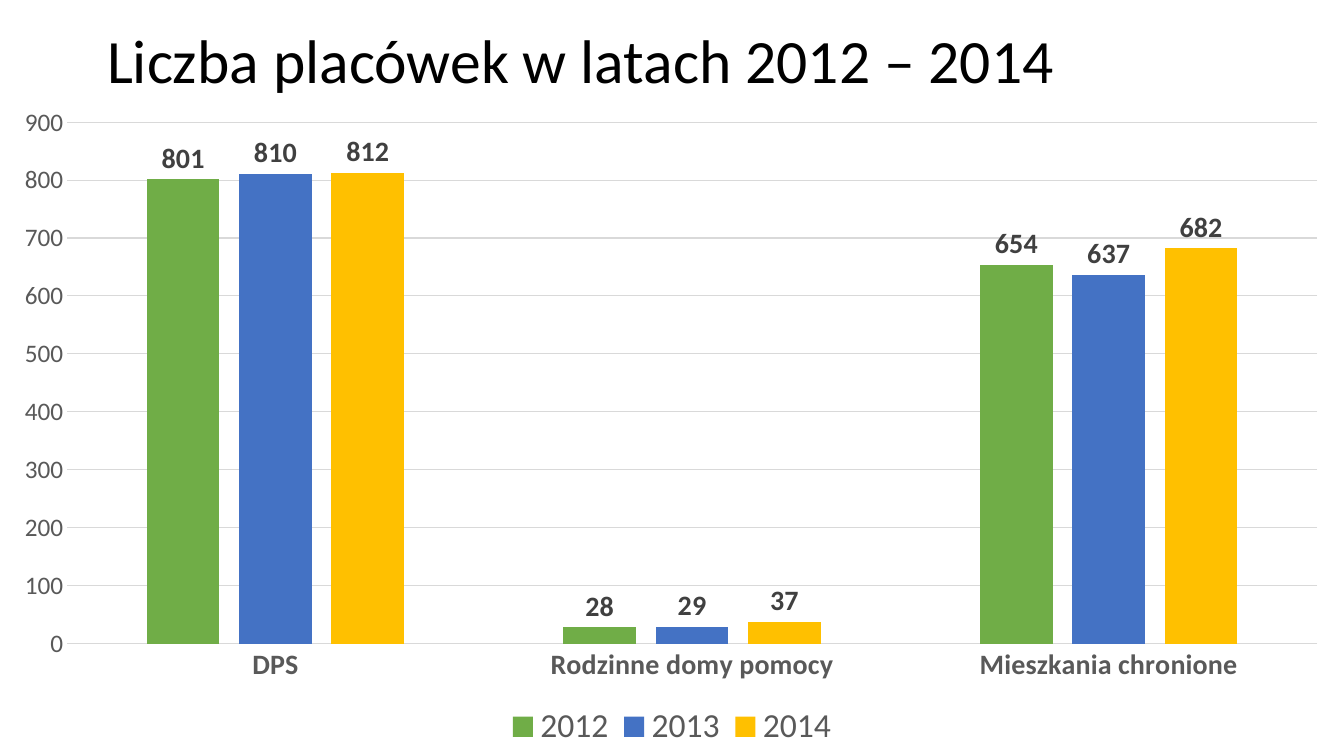
from lxml import etree
from pptx import Presentation
from pptx.chart.data import CategoryChartData
from pptx.dml.color import RGBColor
from pptx.enum.chart import (XL_CHART_TYPE, XL_LABEL_POSITION, XL_LEGEND_POSITION,
                             XL_TICK_MARK)
from pptx.enum.dml import MSO_LINE
from pptx.enum.text import MSO_ANCHOR, PP_ALIGN
from pptx.oxml.ns import qn
from pptx.util import Pt

COLUMNS = XL_CHART_TYPE.COLUMN_CLUSTERED
OUTSIDE_END = XL_LABEL_POSITION.OUTSIDE_END
BOTTOM = XL_LEGEND_POSITION.BOTTOM
NO_TICKS = XL_TICK_MARK.NONE
SOLID = MSO_LINE.SOLID
MIDDLE = MSO_ANCHOR.MIDDLE
CENTER = PP_ALIGN.CENTER

TITLE = "Liczba placówek w latach 2012 – 2014"
CATEGORIES = ["DPS", "Rodzinne domy pomocy", "Mieszkania chronione"]
SERIES = [
    ("2012", [801, 28, 654], "70AD47"),
    ("2013", [810, 29, 637], "4472C4"),
    ("2014", [812, 37, 682], "FFC000"),
]

THEME = {
    "font": "Calibri",
    "title": (44, "000000", False),
    "base": (10, "000000", False),
    "category": (20, "595959", True),
    "value": (18, "595959", False),
    "label": (20, "404040", True),
    "legend": (24, "595959", False),
    "rule": "D9D9D9",
}

SLIDE_SIZE = (960, 540)
TITLE_BOX = (31, 8, 768, 75)
CHART_BOX = (0, 68.4, 960, 471.6)
# Shares of the chart box: left, top, width, height
PLOT_SHARE = (0.05, 0.04, 0.93, 0.79)
LEGEND_SHARE = (0.37, 0.92, 0.26, 0.08)


def style_font(font, role):
    size, color, bold = THEME[role]
    font.name = THEME["font"]
    font.size = Pt(size)
    font.bold = bold
    font.color.rgb = RGBColor.from_string(color)


def style_rule(line):
    line.dash_style = SOLID
    line.width = Pt(0.75)
    line.color.rgb = RGBColor.from_string(THEME["rule"])


def fix_layout(parent, position, share, inner=False):
    """Place a chart part by shares of the chart box."""
    for old in parent.findall(qn("c:layout")):
        parent.remove(old)
    layout = etree.Element(qn("c:layout"))
    manual = etree.SubElement(layout, qn("c:manualLayout"))
    settings = [("layoutTarget", "inner")] if inner else []
    settings += [("xMode", "edge"), ("yMode", "edge")]
    settings += zip("xywh", share)
    for name, value in settings:
        etree.SubElement(manual, qn("c:" + name)).set("val", str(value))
    parent.insert(position, layout)


def add_columns(page):
    data = CategoryChartData()
    data.categories = CATEGORIES
    for name, values, _ in SERIES:
        data.add_series(name, values)
    chart = page.shapes.add_chart(COLUMNS, *map(Pt, CHART_BOX), data).chart
    style_font(chart.font, "base")
    chart.has_title = False

    plot = chart.plots[0]
    plot.gap_width = 219
    plot.overlap = -27
    plot.vary_by_categories = False
    for series, (_, _, color) in zip(plot.series, SERIES):
        series.format.fill.solid()
        series.format.fill.fore_color.rgb = RGBColor.from_string(color)
        labels = series.data_labels
        labels.show_value = True
        labels.position = OUTSIDE_END
        style_font(labels.font, "label")

    for axis, role in ((chart.category_axis, "category"), (chart.value_axis, "value")):
        axis.major_tick_mark = axis.minor_tick_mark = NO_TICKS
        style_font(axis.tick_labels.font, role)
    style_rule(chart.category_axis.format.line)
    chart.value_axis.format.line.fill.background()
    chart.value_axis.minimum_scale = 0
    chart.value_axis.maximum_scale = 900
    chart.value_axis.major_unit = 100
    style_rule(chart.value_axis.major_gridlines.format.line)

    chart.has_legend = True
    chart.legend.position = BOTTOM
    chart.legend.include_in_layout = False
    style_font(chart.legend.font, "legend")
    root = chart.element.find(qn("c:chart"))
    fix_layout(root.find(qn("c:plotArea")), 0, PLOT_SHARE, inner=True)
    fix_layout(root.find(qn("c:legend")), 1, LEGEND_SHARE)


def add_title(page):
    frame = page.shapes.add_textbox(*map(Pt, TITLE_BOX)).text_frame
    frame.word_wrap = True
    frame.vertical_anchor = MIDDLE
    para = frame.paragraphs[0]
    para.text = TITLE
    para.alignment = CENTER
    para.line_spacing = 0.9
    style_font(para.font, "title")


def main():
    deck = Presentation()
    deck.slide_width, deck.slide_height = map(Pt, SLIDE_SIZE)
    page = deck.slides.add_slide(deck.slide_layouts[6])
    add_columns(page)
    add_title(page)
    deck.save("out.pptx")


if __name__ == "__main__":
    main()
